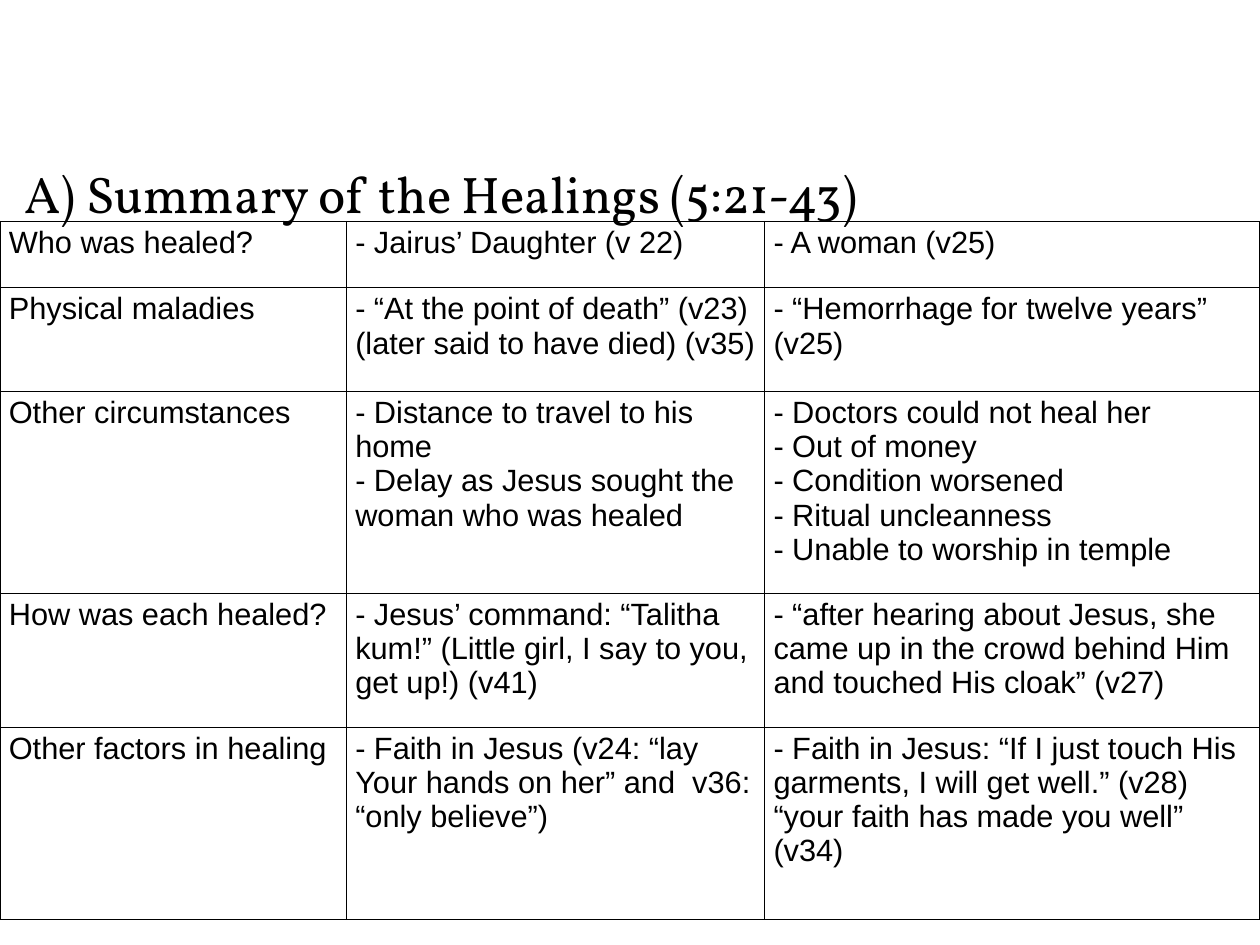
import pptx
import pptx.dml.color
import pptx.enum.text
import pptx.oxml
import pptx.oxml.ns
import pptx.util

Cm = pptx.util.Cm
Pt = pptx.util.Pt
BLACK = pptx.dml.color.RGBColor(0, 0, 0)

WIDTHS = [9.93, 11.99, 14.2]
HEIGHTS = [1.9, 2.97, 5.79, 3.84, 5.51]
HEALINGS = [
    ["Who was healed?", "- Jairus’ Daughter (v 22)", "- A woman (v25)"],
    ["Physical maladies",
     "- “At the point of death” (v23)\n(later said to have died) (v35)",
     "- “Hemorrhage for twelve years” (v25)"],
    ["Other circumstances",
     "- Distance to travel to his home\n"
     "- Delay as Jesus sought the woman who was healed",
     "- Doctors could not heal her\n- Out of money\n- Condition worsened\n"
     "- Ritual uncleanness\n- Unable to worship in temple"],
    ["How was each healed?",
     "- Jesus’ command: “Talitha kum!” (Little girl, I say to you, get up!) (v41)",
     "- “after hearing about Jesus, she came up in the crowd behind Him "
     "and touched His cloak” (v27)"],
    ["Other factors in healing",
     "- Faith in Jesus (v24: “lay Your hands on her” and  v36: “only believe”)",
     "- Faith in Jesus: “If I just touch His garments, I will get well.” (v28)\n"
     "“your faith has made you well” (v34)"],
]


class Deck:
    title_font, title_size = "Vollkorn", 41.8
    body_font, body_size = "Arial", 25
    color, line = BLACK, 1

    def __init__(self, width, height):
        self.show = pptx.Presentation()
        self.show.slide_width = Cm(width)
        self.show.slide_height = Cm(height)
        self.slide = self.show.slides.add_slide(self.show.slide_layouts[6])

    def label(self, frame, text, font, size):
        frame.text = text
        for para in frame.paragraphs:
            for run in para.runs:
                run.font.name = font
                run.font.size = Pt(size)
                run.font.color.rgb = self.color

    def title(self, text, left, top, width, height):
        box = self.slide.shapes.add_textbox(Cm(left), Cm(top), Cm(width), Cm(height))
        frame = box.text_frame
        frame.word_wrap = True
        frame.vertical_anchor = pptx.enum.text.MSO_ANCHOR.MIDDLE
        frame.margin_left = frame.margin_right = Cm(0.13)
        frame.margin_top = frame.margin_bottom = Cm(0.13)
        self.label(frame, text, self.title_font, self.title_size)
        frame.paragraphs[0].line_spacing = 1.2

    def border(self, cell):
        props = cell._tc.get_or_add_tcPr()
        for at, side in enumerate(("lnL", "lnR", "lnT", "lnB")):
            edge = pptx.oxml.parse_xml(
                f'<a:{side} {pptx.oxml.ns.nsdecls("a")} w="{Pt(self.line)}">'
                f'<a:solidFill><a:srgbClr val="{self.color}"/></a:solidFill></a:{side}>')
            props.insert(at, edge)

    def table(self, rows, left, top, widths, heights):
        grid = self.slide.shapes.add_table(
            len(heights), len(widths), Cm(left), Cm(top),
            Cm(sum(widths)), Cm(sum(heights))).table
        grid.first_row = grid.horz_banding = False
        for col, width in zip(grid.columns, widths):
            col.width = Cm(width)
        for row, height, texts in zip(grid.rows, heights, rows):
            row.height = Cm(height)
            for cell, text in zip(row.cells, texts):
                cell.fill.background()
                self.border(cell)
                self.label(cell.text_frame, text, self.body_font, self.body_size)


def main():
    deck = Deck(36.12, 27.1)
    deck.title("A) Summary of the Healings (5:21-43)", 0.58, 4.06, 34.44, 2.59)
    deck.table(HEALINGS, 0, 6.35, WIDTHS, HEIGHTS)
    deck.show.save("out.pptx")


if __name__ == "__main__":
    main()
